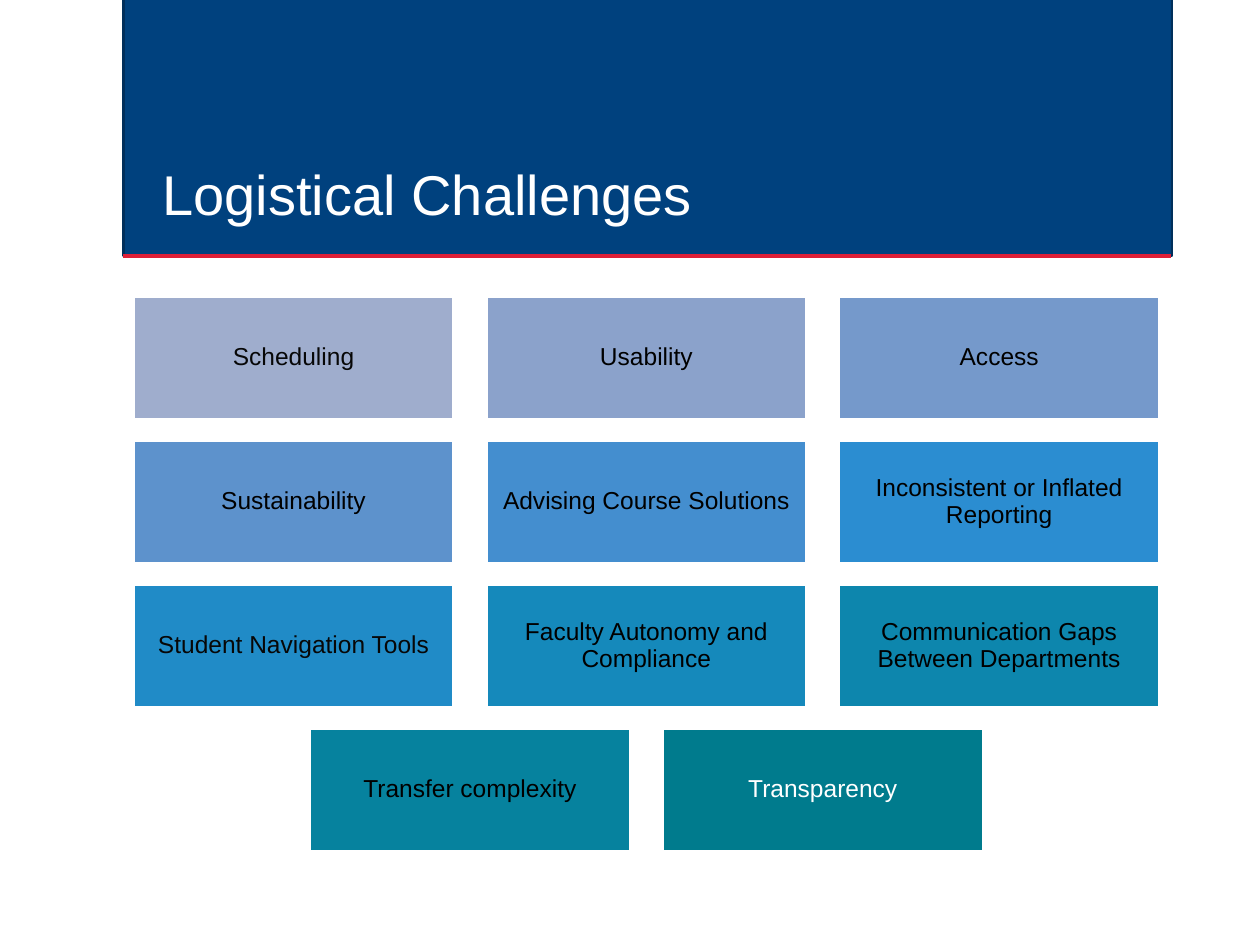
from lxml.etree import SubElement
from pptx import Presentation
from pptx.dml.color import RGBColor
from pptx.enum.shapes import MSO_CONNECTOR, MSO_SHAPE
from pptx.enum.text import MSO_ANCHOR, MSO_AUTO_SIZE, PP_ALIGN
from pptx.oxml.ns import qn
from pptx.util import Inches, Pt

NAVY = RGBColor(0x00, 0x41, 0x7E)
DARK_NAVY = RGBColor(0x00, 0x2F, 0x5B)
RED = RGBColor(0xDE, 0x1F, 0x37)
WHITE = RGBColor(0xFF, 0xFF, 0xFF)
BLACK = RGBColor(0x00, 0x00, 0x00)
SOFT_BLACK = RGBColor(0x07, 0x07, 0x07)

# Each row: (label, fill, text colour)
CHALLENGE_ROWS = [
    [("Scheduling", RGBColor(0x9F, 0xAD, 0xCD), SOFT_BLACK),
     ("Usability", RGBColor(0x8B, 0xA2, 0xCB), BLACK),
     ("Access", RGBColor(0x75, 0x99, 0xCB), BLACK)],
    [("Sustainability", RGBColor(0x5D, 0x92, 0xCC), BLACK),
     ("Advising Course Solutions", RGBColor(0x44, 0x8E, 0xCF), BLACK),
     ("Inconsistent or Inflated Reporting", RGBColor(0x2B, 0x8D, 0xD1), BLACK)],
    [("Student Navigation Tools", RGBColor(0x20, 0x8B, 0xC7), SOFT_BLACK),
     ("Faculty Autonomy and Compliance", RGBColor(0x15, 0x89, 0xBB), BLACK),
     ("Communication Gaps Between Departments", RGBColor(0x0D, 0x86, 0xAD), BLACK)],
    [("Transfer complexity", RGBColor(0x06, 0x82, 0x9E), BLACK),
     ("Transparency", RGBColor(0x00, 0x7B, 0x8D), WHITE)],
]

# Tile grid, in inches; every row is centred on GRID_CENTER
GRID_CENTER, FIRST_TOP, LAST_TOP = 5.13, 2.35, 5.78
TILE_WIDTH, TILE_HEIGHT, COLUMN_GAP = 2.55, 0.98, 0.25


def add_rectangle(page, left, top, width, height, fill, line, line_width):
    box = page.shapes.add_shape(MSO_SHAPE.RECTANGLE, Inches(left), Inches(top),
                                Inches(width), Inches(height))
    box.shadow.inherit = False
    box.fill.solid()
    box.fill.fore_color.rgb = fill
    box.line.color.rgb = line
    box.line.width = Pt(line_width)
    return box


def write_text(box, text, size, color, align, anchor, side, edge):
    frame = box.text_frame
    frame.word_wrap = True
    frame.auto_size = MSO_AUTO_SIZE.NONE
    frame.vertical_anchor = anchor
    frame.margin_left = frame.margin_right = Inches(side)
    frame.margin_top = frame.margin_bottom = Inches(edge)
    para = frame.paragraphs[0]
    para.alignment = align
    para.line_spacing = 0.9
    span = para.add_run()
    span.text = text
    span.font.name = "Arial"
    span.font.size = Pt(size)
    span.font.color.rgb = color
    return para


def add_header(page):
    band = add_rectangle(page, 0.98, -0.02, 8.32, 2.05, NAVY, DARK_NAVY, 1.25)
    rule = page.shapes.add_connector(MSO_CONNECTOR.STRAIGHT, Inches(0.98), Inches(2.03),
                                     Inches(9.29), Inches(2.03))
    rule.line.color.rgb = RED
    rule.line.width = Pt(2.5)
    SubElement(rule.element.spPr, qn("a:effectLst"))

    title = page.shapes.title
    title.left, title.top = Inches(1.19), Inches(0.88)
    title.width, title.height = Inches(7.88), Inches(0.98)
    write_text(title, "Logistical Challenges", 32, WHITE,
               PP_ALIGN.LEFT, MSO_ANCHOR.BOTTOM, 0.1, 0.05)
    # Keep the title in front of the band and the rule
    rule.element.addnext(title.element)
    return band


def add_tile(page, left, top, label, fill, color):
    tile = add_rectangle(page, left, top, TILE_WIDTH, TILE_HEIGHT, fill, WHITE, 2)
    para = write_text(tile, label, 14, color,
                      PP_ALIGN.CENTER, MSO_ANCHOR.MIDDLE, 0.06, 0.06)
    para.space_after = Pt(6)


def add_tile_grid(page):
    row_step = (LAST_TOP - FIRST_TOP) / (len(CHALLENGE_ROWS) - 1)
    column_step = TILE_WIDTH + COLUMN_GAP
    for row, tiles in enumerate(CHALLENGE_ROWS):
        row_left = GRID_CENTER - (len(tiles) * column_step - COLUMN_GAP) / 2
        for column, (label, fill, color) in enumerate(tiles):
            add_tile(page, row_left + column * column_step,
                     FIRST_TOP + row * row_step, label, fill, color)


def main():
    deck = Presentation()
    deck.slide_width, deck.slide_height = Inches(10), Inches(7.5)
    page = deck.slides.add_slide(deck.slide_layouts[5])  # Title Only
    add_header(page)
    add_tile_grid(page)
    deck.save("out.pptx")


if __name__ == "__main__":
    main()
